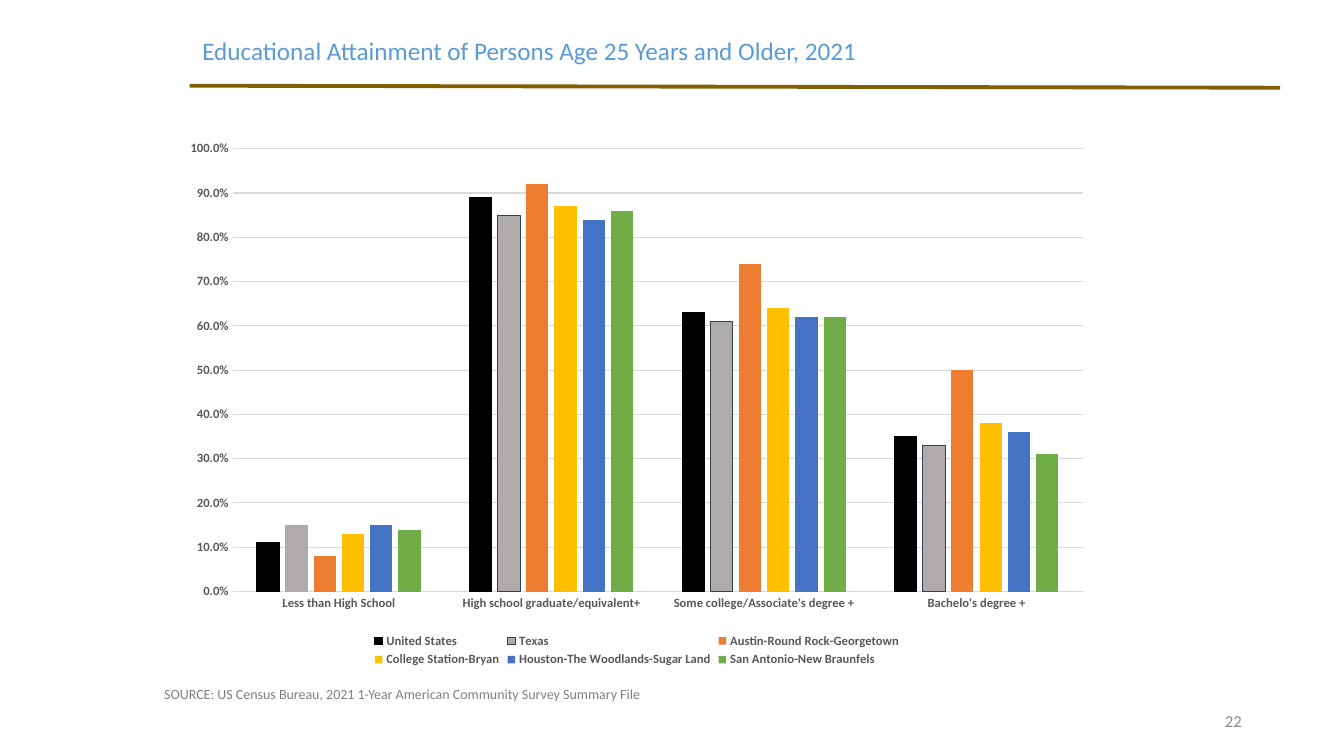
from typing import NamedTuple, Optional

from lxml.etree import SubElement
from pptx import Presentation
from pptx.chart.data import CategoryChartData
from pptx.dml.color import RGBColor
from pptx.enum.chart import XL_CHART_TYPE, XL_LEGEND_POSITION, XL_TICK_MARK
from pptx.enum.shapes import MSO_CONNECTOR
from pptx.enum.text import MSO_ANCHOR as Anchor, PP_ALIGN as Align
from pptx.oxml.ns import qn
from pptx.util import Cm, Pt

FONT = "Calibri"
COLORS = {
    "title": "5B9BD5", "rule": "806000", "source": "808080", "number": "8C8C8C",
    "label": "595959", "grid": "D9D9D9", "black": "000000", "gray": "AFABAB",
    "slate": "333F50", "orange": "ED7D31", "gold": "FFC000", "blue": "4472C4",
    "green": "70AD47",
}


class Region(NamedTuple):
    name: str
    values: tuple[float, ...]
    color: str
    outline: Optional[str] = None


CATEGORIES = (
    "Less than High School",
    "\u00a0High school graduate/equivalent+".strip(),
    "Some college/Associate's degree +",
    "Bachelo's degree +",
)
REGIONS = (
    Region("United States", (0.11, 0.89, 0.63, 0.35), "black", "black"),
    Region("Texas", (0.15, 0.85, 0.61, 0.33), "gray", "slate"),
    Region("Austin-Round Rock-Georgetown", (0.08, 0.92, 0.74, 0.5), "orange"),
    Region("College Station-Bryan", (0.13, 0.87, 0.64, 0.38), "gold"),
    Region("Houston-The Woodlands-Sugar Land", (0.15, 0.84, 0.62, 0.36), "blue"),
    Region("San Antonio-New Braunfels", (0.14, 0.86, 0.62, 0.31), "green"),
)
PLOT_LAYOUT = {"x": 0.065, "y": 0.033, "w": 0.915, "h": 0.82}


def rgb(name: str) -> RGBColor:
    return RGBColor.from_string(COLORS[name])


def style_font(font, size: float, color: str, bold: bool = False) -> None:
    font.name, font.size, font.bold = FONT, Pt(size), bold
    font.color.rgb = rgb(color)


def style_line(line, color: str, width: float = 0.75) -> None:
    line.color.rgb = rgb(color)
    line.width = Pt(width)


def add_text(s, text: str, *, left: float, top: float, width: float, height: float,
             size: float, color: str, anchor=Anchor.MIDDLE, align=Align.LEFT,
             spacing: float = 1.0) -> None:
    tf = s.shapes.add_textbox(Cm(left), Cm(top), Cm(width), Cm(height)).text_frame
    tf.word_wrap, tf.vertical_anchor = True, anchor
    p = tf.paragraphs[0]
    p.alignment, p.line_spacing = align, spacing
    r = p.add_run()
    r.text = text
    style_font(r.font, size, color)


def add_rule(s) -> None:
    rule = s.shapes.add_connector(
        MSO_CONNECTOR.STRAIGHT, Cm(4.78), Cm(2.16), Cm(32.26), Cm(2.21))
    style_line(rule.line, "rule", 2.75)
    SubElement(rule.element.spPr, qn("a:effectLst"))


def place_plot(chart) -> None:
    area = chart.element.chart.plotArea
    layout = area.find(qn("c:layout"))
    if layout is None:
        layout = SubElement(area, qn("c:layout"))
        area.insert(0, layout)
    manual = SubElement(layout, qn("c:manualLayout"))
    settings = {"layoutTarget": "inner", "xMode": "edge", "yMode": "edge", **PLOT_LAYOUT}
    for tag, value in settings.items():
        SubElement(manual, qn(f"c:{tag}")).set("val", str(value))


def add_attainment_chart(s) -> None:
    data = CategoryChartData(number_format="0.0%")
    data.categories = CATEGORIES
    for region in REGIONS:
        data.add_series(region.name, region.values)
    chart = s.shapes.add_chart(XL_CHART_TYPE.COLUMN_CLUSTERED, Cm(4.34), Cm(3.3),
                               Cm(23.42), Cm(13.61), data).chart
    chart.has_title = False
    style_font(chart.font, 10, "black", True)
    chart.has_legend = True
    chart.legend.position = XL_LEGEND_POSITION.BOTTOM
    chart.legend.include_in_layout = False
    style_font(chart.legend.font, 9, "label", True)

    for axis in (chart.category_axis, chart.value_axis):
        axis.major_tick_mark = axis.minor_tick_mark = XL_TICK_MARK.NONE
        style_font(axis.tick_labels.font, 9, "label", True)
    style_line(chart.category_axis.format.line, "grid")
    values = chart.value_axis
    values.minimum_scale, values.maximum_scale, values.major_unit = 0, 1, 0.1
    values.format.line.fill.background()
    style_line(values.major_gridlines.format.line, "grid")
    values.tick_labels.number_format = "0.0%"
    values.tick_labels.number_format_is_linked = False

    plot = chart.plots[0]
    plot.gap_width, plot.overlap, plot.vary_by_categories = 219, -27, False
    for series, region in zip(plot.series, REGIONS):
        series.format.fill.solid()
        series.format.fill.fore_color.rgb = rgb(region.color)
        if region.outline:
            style_line(series.format.line, region.outline)
        else:
            series.format.line.fill.background()
    texas_low = plot.series[1].points[0].format
    texas_low.fill.solid()
    texas_low.fill.fore_color.rgb = rgb("gray")
    texas_low.line.fill.background()
    place_plot(chart)


def main() -> None:
    prs = Presentation()
    prs.slide_width, prs.slide_height = Cm(33.87), Cm(19.05)
    s = prs.slides.add_slide(prs.slide_layouts[6])
    add_rule(s)
    add_text(s, "22", left=23.93, top=17.65, width=7.62, height=1.02,
             size=12, color="number", align=Align.RIGHT)
    add_text(s, "Educational Attainment of Persons Age 25 Years and Older, 2021",
             left=4.85, top=0.38, width=26.85, height=1.88,
             size=18, color="title", spacing=0.9)
    add_text(s, "SOURCE: US Census Bureau, 2021 1-Year American Community Survey Summary File",
             left=3.89, top=17.15, width=14.48, height=0.69,
             size=10, color="source", anchor=Anchor.TOP)
    add_attainment_chart(s)
    prs.save("out.pptx")


if __name__ == "__main__":
    main()
